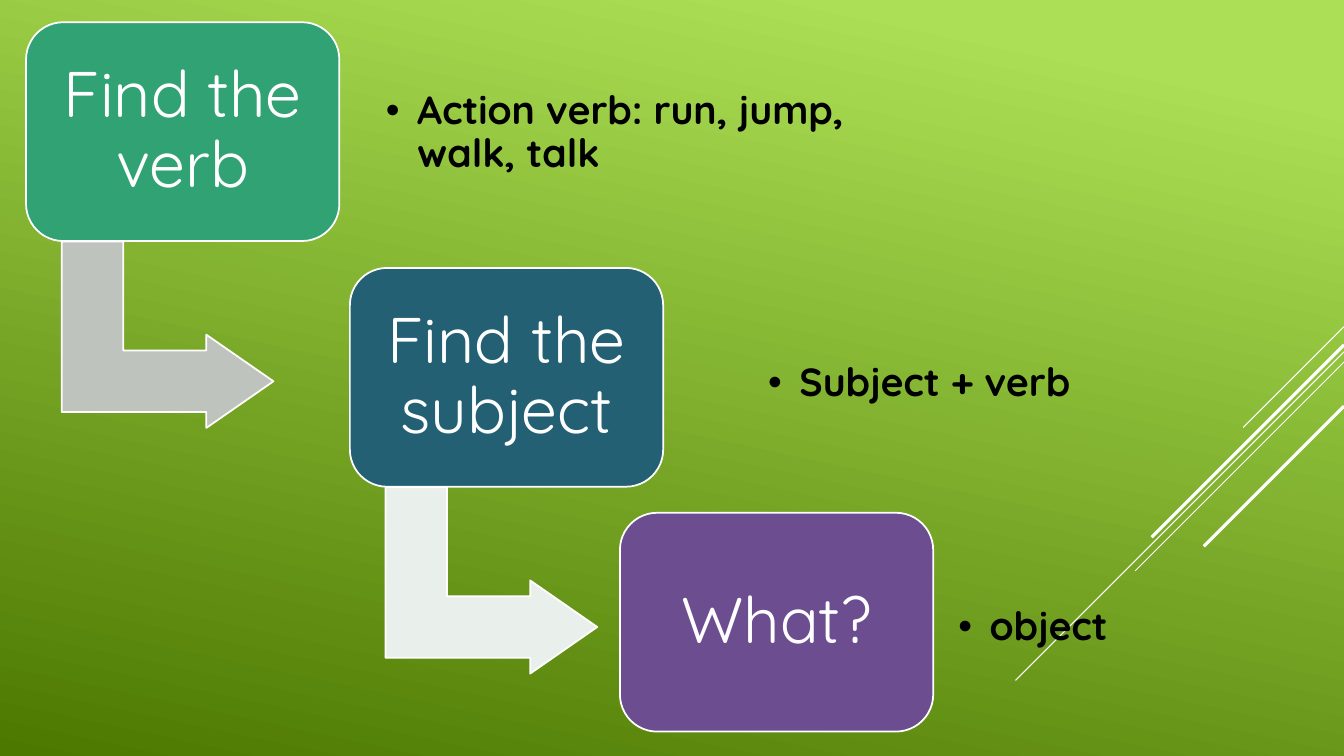
from dataclasses import dataclass

from lxml import etree
from pptx import Presentation
from pptx import util as u
from pptx.dml.color import RGBColor
from pptx.enum import shapes, text
from pptx.oxml import ns

COLORS = {
    "light_green": "ACDF55",
    "dark_green": "4C7800",
    "white": "FFFFFF",
    "black": "000000",
    "jade": "31A274",
    "teal": "236073",
    "purple": "6C4D90",
    "grey": "BFC3BD",
    "mist": "E9F0EC",
}
FONT = "Quicksand"
COLUMNS, ROWS = 32, 18
SLIDE_WIDTH, SLIDE_HEIGHT = u.Inches(13.33), u.Inches(7.5)
BOX_WIDTH, BOX_HEIGHT = 7.46, 5.21
ARROW_WIDTH, ARROW_HEIGHT = 4.44, 5.04
ARROW_RIGHT, ARROW_DOWN = 1.15, 4.92
NOTE_HEIGHT = 4.22
COMPARISON_LAYOUT = 4


@dataclass
class Step:
    title: str
    color: str
    column: float
    row: float
    note: str
    note_column: float
    note_row: float
    note_columns: float
    placeholder: int
    arrow_color: str | None = None


@dataclass
class Ray:
    row: float
    reach: float
    weight: float


STEPS = [
    Step("Find the verb", "jade", 0.62, 0.53,
         "Action verb: run, jump, walk, talk", 8.83, 1.06, 11.83, 1, "grey"),
    Step("Find the subject", "teal", 8.33, 6.38,
         "Subject + verb", 17.93, 7.03, 9.5, 2, "mist"),
    Step("What?", "purple", 14.76, 12.21,
         "object", 22.46, 12.84, 6.19, 3),
]
RAYS = [
    Ray(7.78, 2.4, 0.75),
    Ray(8.38, 7.82, 0.75),
    Ray(8.62, 4.97, 0.75),
    Ray(8.21, 4.58, 2.25),
    Ray(9.67, 3.34, 2.25),
]


def rgb(name: str) -> RGBColor:
    return RGBColor.from_string(COLORS[name])


def across(columns: float) -> int:
    return round(SLIDE_WIDTH * columns / COLUMNS)


def down(rows: float) -> int:
    return round(SLIDE_HEIGHT * rows / ROWS)


def area(column: float, row: float, columns: float, rows: float) -> tuple[int, ...]:
    return across(column), down(row), across(columns), down(rows)


def paint_background(slide) -> None:
    fill = slide.background.fill
    fill.gradient()
    fill.gradient_angle = 258
    stops = ((0.1, "light_green"), (1, "dark_green"))
    for stop, (position, color) in zip(fill.gradient_stops, stops):
        stop.position = position
        stop.color.rgb = rgb(color)


def draw_ray(slide, ray: Ray) -> None:
    connector = slide.shapes.add_connector(
        shapes.MSO_CONNECTOR.STRAIGHT, across(COLUMNS), down(ray.row),
        across(COLUMNS - ray.reach), down(ray.row + ray.reach))
    connector.line.color.rgb = rgb("white")
    connector.line.width = u.Pt(ray.weight)
    etree.SubElement(connector.element.spPr, ns.qn("a:effectLst"))


def add_outlined_shape(slide, kind, bounds: tuple[int, ...], color: str,
                       adjustments: tuple[float, ...]):
    shape = slide.shapes.add_shape(kind, *bounds)
    shape.shadow.inherit = False
    shape.fill.solid()
    shape.fill.fore_color.rgb = rgb(color)
    shape.line.color.rgb = rgb("white")
    shape.line.width = u.Pt(1.25)
    for index, value in enumerate(adjustments):
        shape.adjustments[index] = value
    return shape


def write_text(shape, content: str, size: float, color: str, bold: bool,
               alignment: text.PP_ALIGN, inset: float):
    frame = shape.text_frame
    frame.text = content
    frame.word_wrap = True
    frame.auto_size = text.MSO_AUTO_SIZE.NONE
    frame.vertical_anchor = text.MSO_ANCHOR.MIDDLE
    frame.margin_left = frame.margin_right = u.Inches(inset)
    frame.margin_top = frame.margin_bottom = u.Inches(inset)
    paragraph = frame.paragraphs[0]
    paragraph.alignment = alignment
    paragraph.line_spacing = 0.9
    paragraph.space_before = u.Pt(0)
    paragraph.font.name = FONT
    paragraph.font.size = u.Pt(size)
    paragraph.font.bold = bold
    paragraph.font.color.rgb = rgb(color)
    return paragraph


def add_bullet(paragraph, indent: float) -> None:
    properties = paragraph._p.get_or_add_pPr()
    properties.set("marL", str(u.Inches(indent)))
    properties.set("indent", str(-u.Inches(indent)))
    spacing = properties.find(ns.qn("a:spcBef"))
    bullet = etree.Element(ns.qn("a:buChar"), char="•")
    spacing.addnext(bullet)


def draw_note(slide, step: Step) -> None:
    note = slide.placeholders[step.placeholder]
    note.left, note.top, note.width, note.height = area(
        step.note_column, step.note_row, step.note_columns, NOTE_HEIGHT)
    paragraph = write_text(note, step.note, 28, "black", True,
                           text.PP_ALIGN.LEFT, 0.15)
    add_bullet(paragraph, 0.31)
    slide.shapes.element.append(note.element)


def draw_step(slide, step: Step) -> None:
    if step.arrow_color:
        arrow = add_outlined_shape(
            slide, shapes.MSO_SHAPE.BENT_UP_ARROW,
            area(step.column + ARROW_RIGHT, step.row + ARROW_DOWN,
                 ARROW_WIDTH, ARROW_HEIGHT),
            step.arrow_color, (0.33, 0.25, 0.36))
        arrow.rotation = 90
    box = add_outlined_shape(
        slide, shapes.MSO_SHAPE.ROUNDED_RECTANGLE,
        area(step.column, step.row, BOX_WIDTH, BOX_HEIGHT), step.color, (0.17,))
    write_text(box, step.title, 46, "white", False, text.PP_ALIGN.CENTER, 0.19)
    draw_note(slide, step)


def main() -> None:
    presentation = Presentation()
    presentation.slide_width = SLIDE_WIDTH
    presentation.slide_height = SLIDE_HEIGHT
    slide = presentation.slides.add_slide(presentation.slide_layouts[COMPARISON_LAYOUT])
    paint_background(slide)
    used = {step.placeholder for step in STEPS}
    for placeholder in list(slide.placeholders):
        if placeholder.placeholder_format.idx not in used:
            slide.shapes.element.remove(placeholder.element)
    for ray in RAYS:
        draw_ray(slide, ray)
    for step in STEPS:
        draw_step(slide, step)
    presentation.save("out.pptx")


if __name__ == "__main__":
    main()
